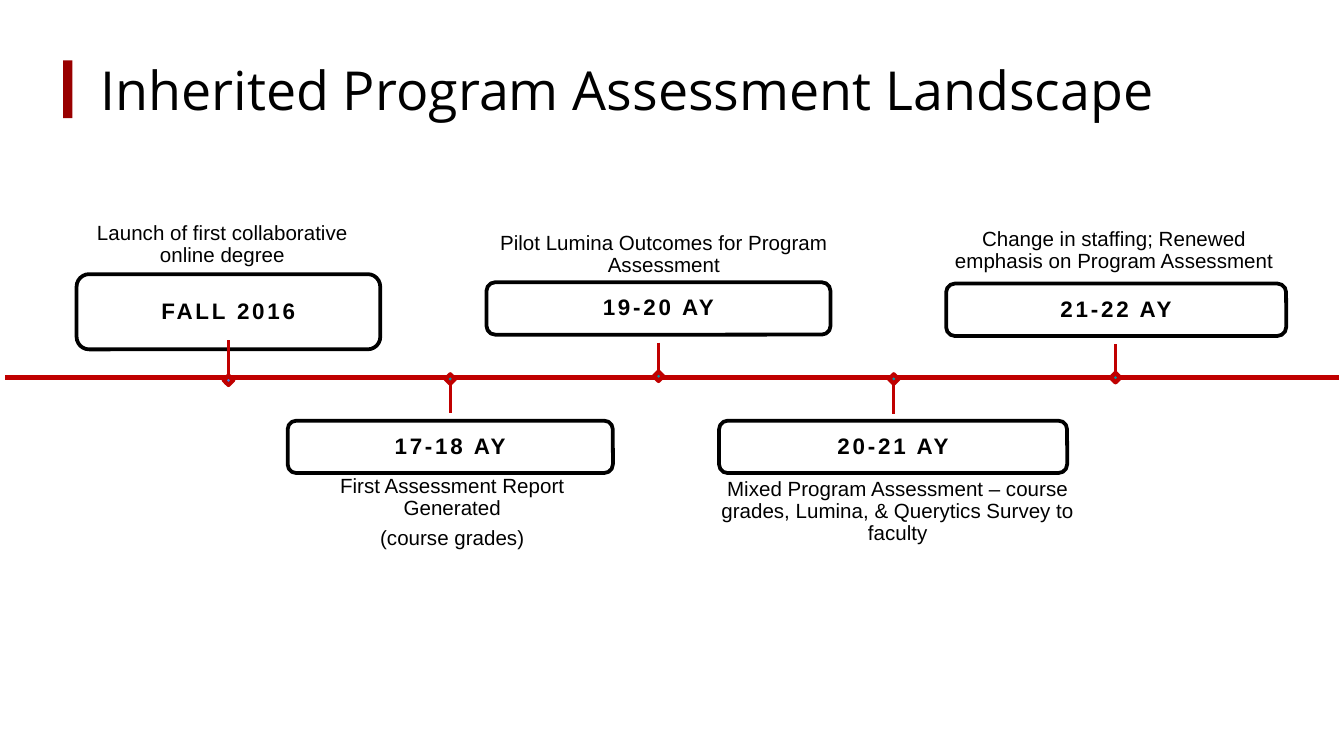
from dataclasses import dataclass

from lxml import etree
from pptx import Presentation
from pptx.dml.color import RGBColor
from pptx.enum.shapes import MSO_CONNECTOR, MSO_SHAPE
from pptx.enum.text import MSO_ANCHOR, PP_ALIGN
from pptx.oxml.ns import qn
from pptx.util import Inches, Pt

RECTANGLE = MSO_SHAPE.RECTANGLE
ROUNDED = MSO_SHAPE.ROUNDED_RECTANGLE
STRAIGHT = MSO_CONNECTOR.STRAIGHT
MIDDLE = MSO_ANCHOR.MIDDLE
TOP = MSO_ANCHOR.TOP
CENTER = PP_ALIGN.CENTER
LEFT = PP_ALIGN.LEFT

BLACK = "000000"
RED = "C00000"
DARK_RED = "990000"
BLUE = "4285F4"
TEAL = "0097A7"
SLIDE_WIDTH = 10
AXIS_Y = 2.81
MARKER_SIZE = 0.05


@dataclass(frozen=True)
class Box:
    left: float
    top: float
    width: float
    height: float

    def lengths(self):
        return [Inches(value) for value in (self.left, self.top, self.width, self.height)]


@dataclass(frozen=True)
class Milestone:
    period: str
    description: str
    card: Box
    caption: Box
    stem_x: float
    stem_top: float
    stem_bottom: float
    marker_y: float
    marker_fill: str = TEAL


MILESTONES = [
    Milestone("FALL 2016", "Launch of first collaborative online degree",
              Box(0.57, 2.04, 2.26, 0.56), Box(0.54, 1.55, 2.23, 0.56),
              1.7, 2.53, 2.85, 2.83, BLUE),
    Milestone("17-18 AY", "First Assessment Report Generated\n(course grades)",
              Box(2.14, 3.13, 2.42, 0.39), Box(2.09, 3.43, 2.55, 0.78),
              3.35, 2.84, 3.07, 2.82),
    Milestone("19-20 AY", "Pilot Lumina Outcomes for Program Assessment",
              Box(3.62, 2.1, 2.56, 0.39), Box(3.57, 1.62, 2.74, 0.56),
              4.9, 2.55, 2.78, 2.8),
    Milestone("20-21 AY",
              "Mixed Program Assessment – course grades, Lumina, & Querytics Survey to faculty",
              Box(5.35, 3.13, 2.59, 0.39), Box(5.15, 3.45, 3.06, 0.71),
              6.65, 2.85, 3.08, 2.82),
    Milestone("21-22 AY", "Change in staffing; Renewed emphasis on Program Assessment",
              Box(7.04, 2.11, 2.53, 0.39), Box(6.97, 1.59, 2.64, 0.56),
              8.3, 2.56, 2.79, 2.81),
]


def color(value: str) -> RGBColor:
    return RGBColor.from_string(value)


def add_panel(slide, kind, box: Box, fill: str = "", line: str = "", weight: float = 0):
    shape = slide.shapes.add_shape(kind, *box.lengths())
    shape.shadow.inherit = False
    if fill:
        shape.fill.solid()
        shape.fill.fore_color.rgb = color(fill)
    else:
        shape.fill.background()
    if line:
        shape.line.color.rgb = color(line)
        shape.line.width = Pt(weight)
    else:
        shape.line.fill.background()
    return shape


def add_line(slide, start: tuple, end: tuple, weight: float) -> None:
    connector = slide.shapes.add_connector(
        STRAIGHT, *[Inches(value) for value in (*start, *end)])
    connector.line.color.rgb = color(RED)
    connector.line.width = Pt(weight)
    etree.SubElement(connector._element.spPr, qn("a:effectLst"))


def write_text(shape, text: str, size: float, inset_x: float, inset_y: float,
               font: str = "Arial", bold: bool = False, align=CENTER,
               anchor=MIDDLE, line_spacing: float = 0.9, tracking: int = 0) -> None:
    frame = shape.text_frame
    frame.word_wrap = True
    frame.vertical_anchor = anchor
    frame.margin_left = frame.margin_right = Inches(inset_x)
    frame.margin_top = frame.margin_bottom = Inches(inset_y)
    frame.text = text
    for paragraph in frame.paragraphs:
        paragraph.alignment = align
        paragraph.line_spacing = line_spacing
        paragraph.space_after = Pt(3.85)
        for run in paragraph.runs:
            run.font.name = font
            run.font.size = Pt(size)
            run.font.bold = bold
            run.font.color.rgb = color(BLACK)
            if tracking:
                run._r.get_or_add_rPr().set("spc", str(tracking))
    frame.paragraphs[-1].space_after = Pt(0)


def add_milestone(slide, milestone: Milestone) -> None:
    card = add_panel(slide, ROUNDED, milestone.card, line=BLACK, weight=2)
    write_text(card, milestone.period, 12, 0.07, 0, bold=True, tracking=150)
    caption = slide.shapes.add_textbox(*milestone.caption.lengths())
    write_text(caption, milestone.description, 11, 0.11, 0.11, anchor=TOP)
    add_line(slide, (milestone.stem_x, milestone.stem_top),
             (milestone.stem_x, milestone.stem_bottom), 1.75)
    marker_box = Box(milestone.stem_x - MARKER_SIZE / 2,
                     milestone.marker_y - MARKER_SIZE / 2, MARKER_SIZE, MARKER_SIZE)
    marker = add_panel(slide, RECTANGLE, marker_box, milestone.marker_fill, RED, 2.25)
    marker.rotation = 45


def main() -> None:
    presentation = Presentation()
    presentation.slide_width = Inches(SLIDE_WIDTH)
    presentation.slide_height = Inches(SLIDE_WIDTH * 9 / 16)
    slide = presentation.slides.add_slide(presentation.slide_layouts[6])

    add_panel(slide, RECTANGLE, Box(0.47, 0.45, 0.07, 0.43), DARK_RED)
    title = slide.shapes.add_textbox(*Box(0.65, 0.35, 9.01, 0.63).lengths())
    write_text(title, "Inherited Program Assessment Landscape", 28.8, 0.1, 0.1,
               font="Open Sans", align=LEFT, line_spacing=1.0)

    add_line(slide, (0.04, AXIS_Y), (9.96, AXIS_Y), 3)
    for milestone in MILESTONES:
        add_milestone(slide, milestone)

    presentation.save("out.pptx")


if __name__ == "__main__":
    main()
